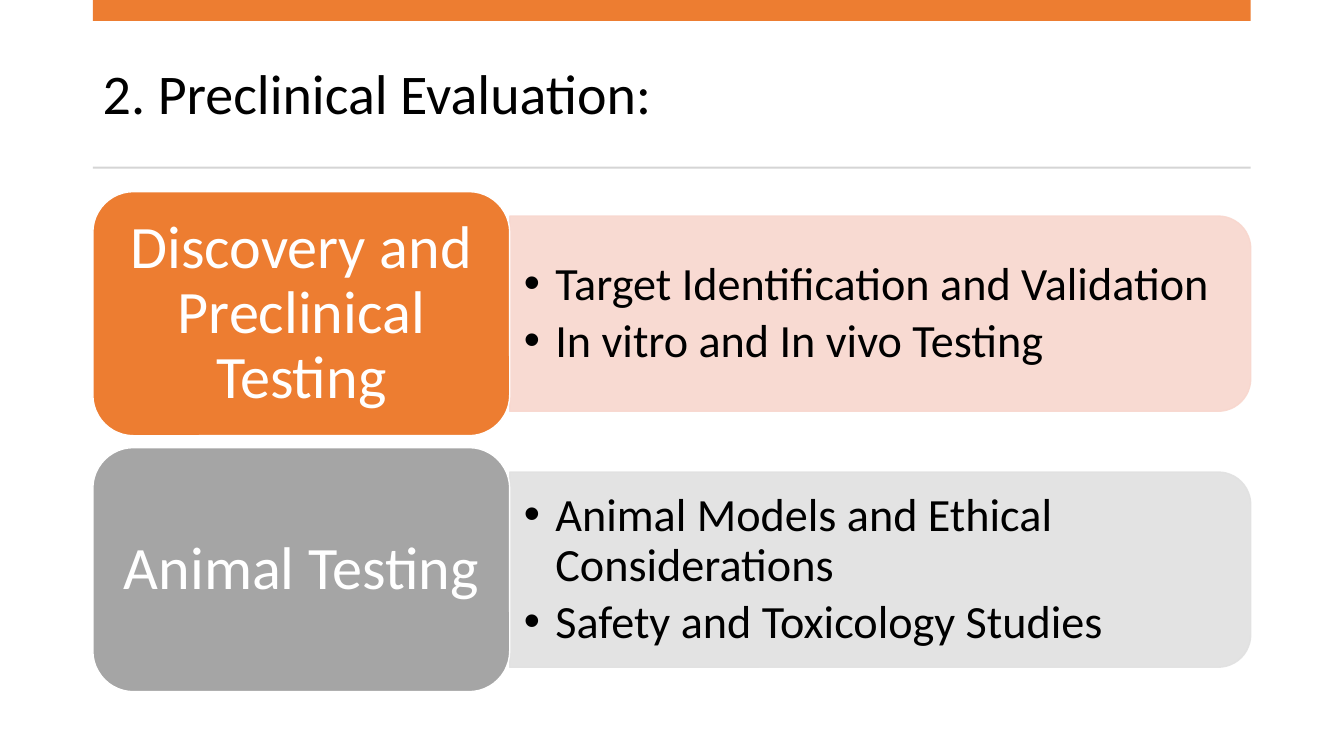
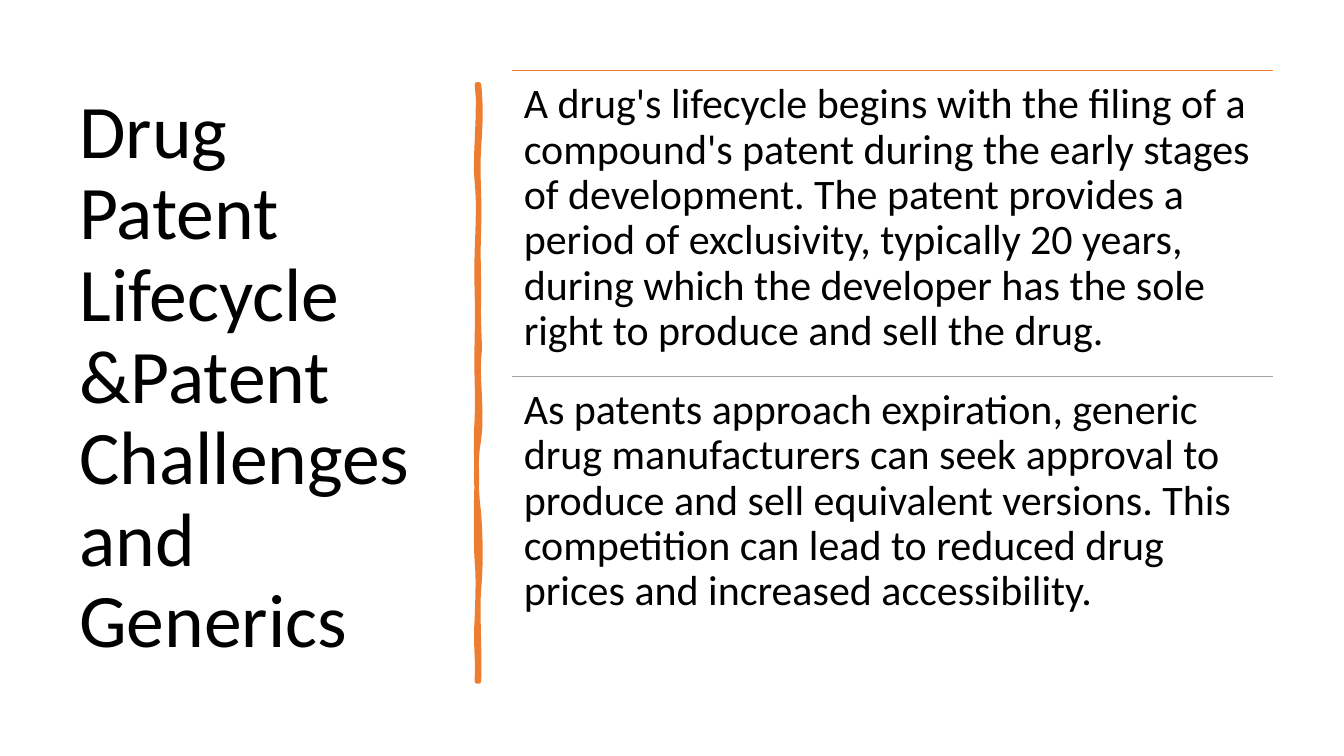
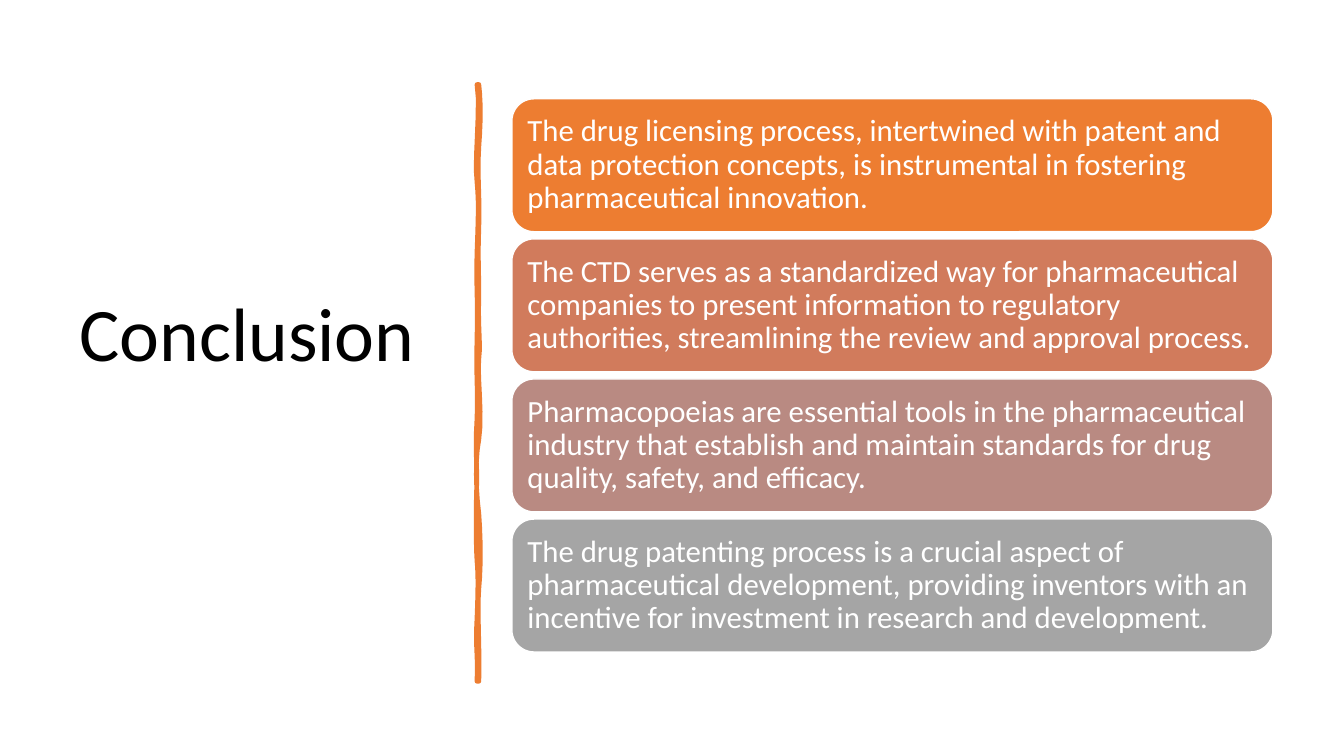
import dataclasses

import pptx
import pptx.dml.color
import pptx.enum.shapes
import pptx.enum.text
import pptx.oxml.ns
import pptx.util
from lxml import etree

Cm, Pt = pptx.util.Cm, pptx.util.Pt
SHAPE = pptx.enum.shapes.MSO_SHAPE
ANCHOR = pptx.enum.text.MSO_ANCHOR
ALIGN = pptx.enum.text.PP_ALIGN
qn = pptx.oxml.ns.qn


@dataclasses.dataclass(frozen=True)
class Theme:
    font: str = "Calibri"
    black: str = "000000"
    white: str = "FFFFFF"
    orange: str = "ED7D31"
    grey: str = "A5A5A5"
    pale_orange: str = "F8D7CE"
    pale_grey: str = "E1E1E1"
    rule: str = "D5D5D5"
    cards: tuple = ("ED7D31", "D17B5C", "B98A82", "A5A5A5")
    title: int = 40
    side_title: int = 54
    label: int = 43
    bullet: int = 33
    body: int = 30
    card: int = 22
    line_spacing: float = 0.9


THEME = Theme()


@dataclasses.dataclass(frozen=True)
class Box:
    """A rectangle in centimetres."""
    left: float
    top: float
    width: float
    height: float

    def lengths(self):
        return [Cm(v) for v in (self.left, self.top, self.width, self.height)]

    def rows(self, count, gap=0):
        height = (self.height - gap * (count - 1)) / count
        return [Box(self.left, self.top + i * (height + gap), self.width, height)
                for i in range(count)]


# Regions shared by the slides
CONTENT = Box(2.34, 4.83, 29.18, 12.6)
SIDE_TITLE = Box(1.75, 1.78, 9.5, 15.52)
SIDE_BODY = Box(12.9, 1.78, 19.18, 15.4)
SIDE_CARDS = Box(12.9, 2.49, 19.18, 13.94)
DIVIDER = Box(12.02, 2.13, 0.05, 15.04)

# Brush edges: bend, y, bend, y of two control points, then y of the end
RIGHT_EDGE = [
    (0.05, 0.46, 0.05, 0.89, 1.57), (-0.05, 2.26, 0.03, 2.82, 3.61),
    (-0.03, 4.39, 0, 4.52, 5.33), (-0.03, 6.12, 0.05, 6.55, 6.91),
    (-0.05, 7.26, 0.1, 8.38, 8.94), (-0.1, 9.47, -0.08, 10.16, 10.82),
    (0.05, 11.48, 0.05, 12.19, 12.7), (-0.05, 13.18, 0.03, 14.38, 15.04)]
LEFT_EDGE = [
    (0.03, 14.27, -0.05, 14.22, 13.44), (0.03, 12.67, 0.03, 12.34, 12.01),
    (-0.03, 11.68, -0.03, 10.44, 9.98), (0, 9.53, -0.05, 9.17, 8.41),
    (0.03, 7.67, -0.03, 7.34, 6.38), (0.03, 5.44, -0.03, 5, 4.22),
    (0.03, 3.4, 0.05, 2.95, 2.46), (-0.08, 2.01, 0.1, 0.51, 0)]


def rgb(value):
    return pptx.dml.color.RGBColor.from_string(value)


def add_bullet(para, indent):
    props = para._p.get_or_add_pPr()
    props.set("marL", str(Cm(indent)))
    props.set("indent", str(-Cm(indent)))
    etree.SubElement(props, qn("a:buFont")).set("typeface", "Arial")
    etree.SubElement(props, qn("a:buChar")).set("char", "•")


def write(shape, texts, size, color, anchor=ANCHOR.MIDDLE, align=ALIGN.LEFT,
          insets=(0.25, 0.13), bullet_indent=0):
    frame = shape.text_frame
    frame.word_wrap = True
    frame.vertical_anchor = anchor
    frame.margin_left = frame.margin_right = Cm(insets[0])
    frame.margin_top = frame.margin_bottom = Cm(insets[1])
    for index, text in enumerate(texts):
        para = frame.paragraphs[0] if index == 0 else frame.add_paragraph()
        para.text = text
        para.alignment = align
        para.line_spacing = THEME.line_spacing
        if index:
            para.space_before = Pt(5)
        if bullet_indent:
            add_bullet(para, bullet_indent)
        para.font.name = THEME.font
        para.font.size = Pt(size)
        para.font.color.rgb = rgb(color)


def add_text(page, box, texts, size, **options):
    write(page.shapes.add_textbox(*box.lengths()), texts, size, THEME.black, **options)


def paint(shape, fill, line=None, width=1):
    shape.shadow.inherit = False
    shape.fill.solid()
    shape.fill.fore_color.rgb = rgb(fill)
    if line:
        shape.line.color.rgb = rgb(line)
        shape.line.width = Pt(width)
    else:
        shape.line.fill.background()


def add_block(page, kind, box, fill, line=None):
    shape = page.shapes.add_shape(kind, *box.lengths())
    paint(shape, fill, line)
    return shape


def add_rule(page, box, color):
    """Draw a line along the top of the box."""
    left, top, width, _ = box.lengths()
    rule = page.shapes.add_connector(
        pptx.enum.shapes.MSO_CONNECTOR.STRAIGHT, left, top, left + width, top)
    rule.line.color.rgb = rgb(color)
    rule.line.width = Pt(1)
    etree.SubElement(rule._element.spPr, qn("a:effectLst"))


def edge_points(x, start, segments, steps=6):
    """Sample the curves of one wavy vertical edge."""
    points = [(x, start)]
    for bend1, y1, bend2, y2, end in segments:
        for step in range(1, steps + 1):
            t = step / steps
            near, far = 3 * t * (1 - t) ** 2, 3 * t * t * (1 - t)
            points.append((x + near * bend1 + far * bend2,
                           (1 - t) ** 3 * start + near * y1 + far * y2 + t ** 3 * end))
        start = end
    return points


def draw_divider(page, box):
    outline = (edge_points(box.width, 0, RIGHT_EDGE)
               + edge_points(0, box.height, LEFT_EDGE))
    points = [(Cm(box.left + x), Cm(box.top + y)) for x, y in outline]
    builder = page.shapes.build_freeform(*points[0])
    builder.add_line_segments(points[1:], close=True)
    stroke = builder.convert_to_shape()
    paint(stroke, THEME.orange, THEME.orange, 3.25)
    etree.SubElement(stroke.line._get_or_add_ln(), qn("a:round"))


def draw_header(page, title):
    left, width = CONTENT.left, CONTENT.width
    add_text(page, Box(left, 0.94, width, 3), [title], THEME.title)
    add_block(page, SHAPE.RECTANGLE, Box(left, 0, width, 0.53), THEME.orange)
    add_block(page, SHAPE.RECTANGLE, Box(left, 4.2, width, 0.05), THEME.rule)


def draw_side_title(page, title, box=SIDE_TITLE):
    add_text(page, box, [title], THEME.side_title)
    draw_divider(page, DIVIDER)


def draw_topic(page, box, label, points, fill, pale):
    label_width = 0.36 * box.width
    width, height = box.width - label_width, 0.8 * box.height
    panel = Box(box.left + label_width, box.top + 0.1 * box.height, width, height)

    # Panel rounded on the right: an upright shape turned a quarter
    upright = Box(panel.left + (width - height) / 2,
                  panel.top + (height - width) / 2, height, width)
    shape = add_block(page, SHAPE.ROUND_2_SAME_RECTANGLE, upright, pale, pale)
    shape.rotation = 90
    for color in shape._element.spPr.iter(qn("a:srgbClr")):
        etree.SubElement(color, qn("a:alpha")).set("val", "90000")
    add_text(page, dataclasses.replace(panel, width=width - 0.24), points,
             THEME.bullet, insets=(0.36, 0.18), bullet_indent=0.79)

    # Label
    tab = add_block(page, SHAPE.ROUNDED_RECTANGLE,
                    dataclasses.replace(box, width=label_width), fill, THEME.white)
    write(tab, [label], THEME.label, THEME.white, align=ALIGN.CENTER, insets=(0.46, 0.23))


def draw_passage(page, box, text, color):
    add_rule(page, box, color)
    add_text(page, box, [text], THEME.body, anchor=ANCHOR.TOP, insets=(0.3, 0.3))


def draw_card(page, box, text, fill):
    card = add_block(page, SHAPE.ROUNDED_RECTANGLE, box, fill, THEME.white)
    write(card, [text], THEME.card, THEME.white, insets=(0.23, 0.23))


def build_evaluation(page):
    draw_header(page, "2. Preclinical Evaluation:")
    topics = [
        ("Discovery and Preclinical Testing",
         ["Target Identification and Validation", "In vitro and In vivo Testing"],
         THEME.orange, THEME.pale_orange),
        ("Animal Testing",
         ["Animal Models and Ethical Considerations", "Safety and Toxicology Studies"],
         THEME.grey, THEME.pale_grey)]
    for box, topic in zip(CONTENT.rows(len(topics), 0.3), topics):
        draw_topic(page, box, *topic)


def build_lifecycle(page):
    draw_side_title(page, "Drug Patent Lifecycle &Patent Challenges and Generics")
    passages = [
        ("A drug's lifecycle begins with the filing of a compound's patent during the "
         "early stages of development. The patent provides a period of exclusivity, "
         "typically 20 years, during which the developer has the sole right to produce "
         "and sell the drug.", THEME.orange),
        ("As patents approach expiration, generic drug manufacturers can seek approval "
         "to produce and sell equivalent versions. This competition can lead to reduced "
         "drug prices and increased accessibility.", THEME.grey)]
    for box, passage in zip(SIDE_BODY.rows(len(passages)), passages):
        draw_passage(page, box, *passage)


def build_conclusion(page):
    # The title sits a little above the middle
    draw_side_title(page, "Conclusion", dataclasses.replace(SIDE_TITLE, height=13.44))
    texts = [
        "The drug licensing process, intertwined with patent and data protection "
        "concepts, is instrumental in fostering pharmaceutical innovation.",
        "The CTD serves as a standardized way for pharmaceutical companies to present "
        "information to regulatory authorities, streamlining the review and approval "
        "process.",
        "Pharmacopoeias are essential tools in the pharmaceutical industry that "
        "establish and maintain standards for drug quality, safety, and efficacy.",
        "The drug patenting process is a crucial aspect of pharmaceutical development, "
        "providing inventors with an incentive for investment in research and "
        "development."]
    for box, text, fill in zip(SIDE_CARDS.rows(len(texts), 0.18), texts, THEME.cards):
        draw_card(page, box, text, fill)


def main():
    deck = pptx.Presentation()
    deck.slide_width, deck.slide_height = Cm(33.87), Cm(19.05)
    for build in (build_evaluation, build_lifecycle, build_conclusion):
        build(deck.slides.add_slide(deck.slide_layouts[6]))
    deck.save("out.pptx")


if __name__ == "__main__":
    main()
